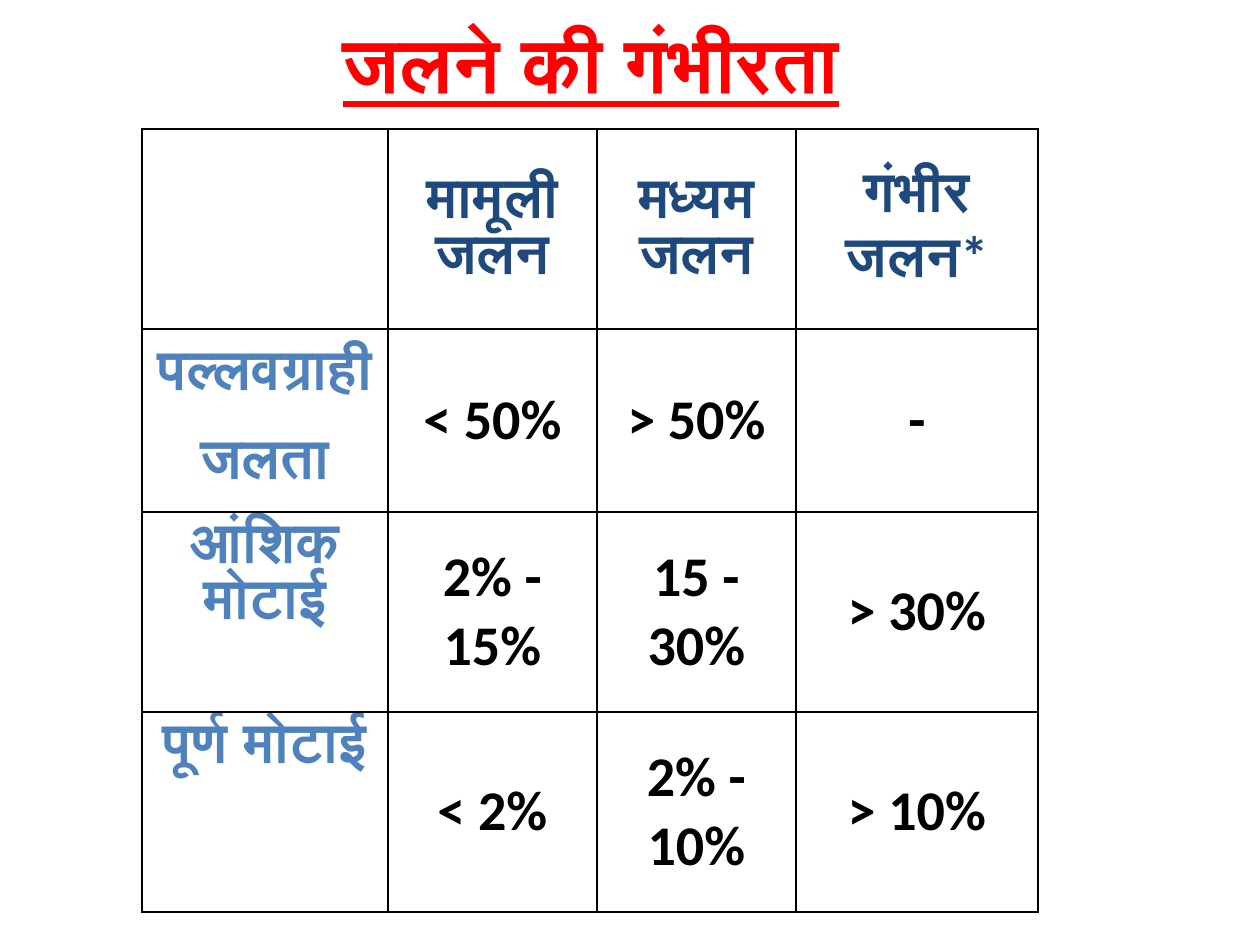
from typing import NamedTuple

import pptx
import pptx.dml.color
import pptx.enum.text
import pptx.oxml
import pptx.oxml.ns
import pptx.util

PX = 914400 // 126
FONT = "Calibri"
RED = pptx.dml.color.RGBColor(0xFF, 0x00, 0x00)
NAVY = pptx.dml.color.RGBColor(0x1F, 0x49, 0x7D)
BLUE = pptx.dml.color.RGBColor(0x4F, 0x81, 0xBD)
BLACK = pptx.dml.color.RGBColor(0x00, 0x00, 0x00)
MIDDLE = pptx.enum.text.MSO_ANCHOR.MIDDLE
TOP = pptx.enum.text.MSO_ANCHOR.TOP

COLUMN_WIDTHS = (246, 209, 199, 242)
ROW_HEIGHTS = (200, 183, 200, 200)
HEADINGS = ("", "मामूली जलन", "मध्यम जलन", "गंभीर जलन*")


class BurnDepth(NamedTuple):
    label: str
    values: tuple[str, str, str]
    label_anchor: pptx.enum.text.MSO_ANCHOR = TOP
    label_spacing: float | None = None


BURN_DEPTHS = (
    BurnDepth("पल्लवग्राही \vजलता", ("< 50%", "> 50%", "-"), MIDDLE, 0.8),
    BurnDepth("आंशिक मोटाई", ("2% - 15%", "15 - 30%", "> 30%")),
    BurnDepth("पूर्ण मोटाई", ("< 2%", "2% - 10%", "> 10%")),
)


def px(length: int) -> pptx.util.Emu:
    return pptx.util.Emu(length * PX)


def write(text_frame, text: str, size: int, color, spacing: float | None = None):
    """Write one bold, centred paragraph."""
    paragraph = text_frame.paragraphs[0]
    paragraph.text = text
    paragraph.alignment = pptx.enum.text.PP_ALIGN.CENTER
    paragraph.line_spacing = spacing
    font = paragraph.font
    font.name, font.size, font.bold = FONT, pptx.util.Pt(size), True
    font.color.rgb = color
    return paragraph


def add_borders(cell) -> None:
    properties = cell._tc.get_or_add_tcPr()
    for index, side in enumerate(("lnL", "lnR", "lnT", "lnB")):
        line = pptx.oxml.parse_xml(
            f'<a:{side} {pptx.oxml.ns.nsdecls("a")} w="12700"><a:solidFill>'
            f'<a:srgbClr val="{BLACK}"/></a:solidFill></a:{side}>'
        )
        properties.insert(index, line)


def fill_cell(cell, text: str, color, anchor=MIDDLE, spacing: float | None = None) -> None:
    cell.fill.background()
    add_borders(cell)
    cell.margin_left = cell.margin_right = px(10)
    cell.margin_top = cell.margin_bottom = px(6)
    cell.vertical_anchor = anchor
    if text:
        write(cell.text_frame, text, 32, color, spacing)


def add_title(slide) -> None:
    title = slide.shapes.add_textbox(px(204), px(9), px(774), px(106))
    title.text_frame.word_wrap = True
    title.text_frame.auto_size = pptx.enum.text.MSO_AUTO_SIZE.SHAPE_TO_FIT_TEXT
    paragraph = write(title.text_frame, "जलने की गंभीरता", 44, RED)
    paragraph.font.underline = True


def add_severity_table(slide) -> None:
    table = slide.shapes.add_table(
        len(ROW_HEIGHTS), len(COLUMN_WIDTHS), px(142), px(129),
        px(sum(COLUMN_WIDTHS)), px(sum(ROW_HEIGHTS)),
    ).table
    table.first_row = table.horz_banding = False
    for column, width in zip(table.columns, COLUMN_WIDTHS):
        column.width = px(width)
    for row, height in zip(table.rows, ROW_HEIGHTS):
        row.height = px(height)

    # Heading row
    for column_index, heading in enumerate(HEADINGS):
        fill_cell(table.cell(0, column_index), heading, NAVY)

    # One row for each depth of burn
    for row_index, depth in enumerate(BURN_DEPTHS, start=1):
        fill_cell(table.cell(row_index, 0), depth.label, BLUE,
                  depth.label_anchor, depth.label_spacing)
        for column_index, value in enumerate(depth.values, start=1):
            fill_cell(table.cell(row_index, column_index), value, BLACK)


def main() -> None:
    presentation = pptx.Presentation()
    presentation.slide_width = pptx.util.Inches(10)
    presentation.slide_height = pptx.util.Inches(7.5)
    slide = presentation.slides.add_slide(presentation.slide_layouts[6])
    add_title(slide)
    add_severity_table(slide)
    presentation.save("out.pptx")


if __name__ == "__main__":
    main()
